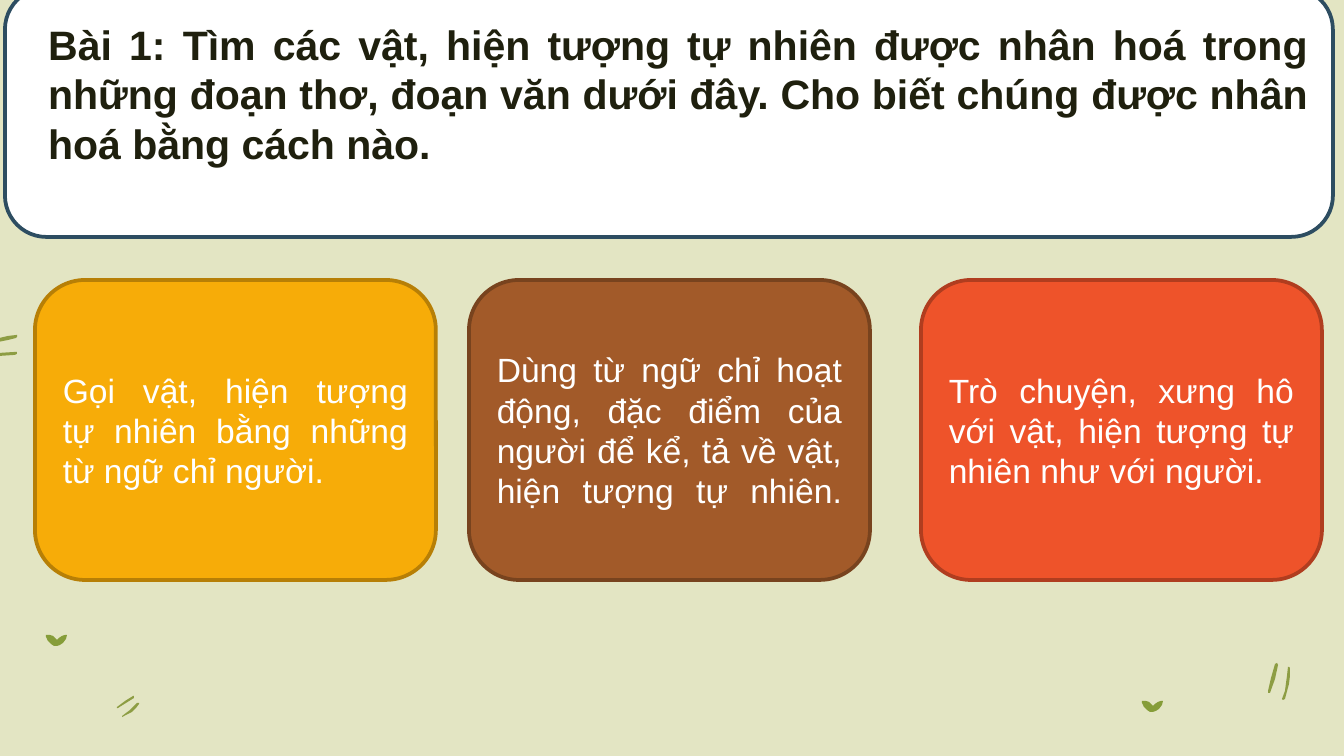
from pptx import Presentation
from pptx import util as u
from pptx.dml.color import RGBColor
from pptx.enum import shapes, text

PX = 914400 / 134.4
WHITE = RGBColor(0xFF, 0xFF, 0xFF)
SAGE = RGBColor(0xE3, 0xE5, 0xC3)
NAVY = RGBColor(0x2D, 0x4D, 0x61)
INK = RGBColor(0x1F, 0x20, 0x0E)
GRASS = RGBColor(0x8D, 0x9D, 0x43)
LEAF = RGBColor(0x86, 0x9D, 0x39)
AMBER = RGBColor(0xF7, 0xAC, 0x08)
AMBER_EDGE = RGBColor(0xB7, 0x7F, 0x06)
BROWN = RGBColor(0xA2, 0x5A, 0x29)
BROWN_EDGE = RGBColor(0x78, 0x43, 0x1E)
CORAL = RGBColor(0xEE, 0x53, 0x2A)
CORAL_EDGE = RGBColor(0xB0, 0x3D, 0x1F)

deck = Presentation()
deck.slide_width = round(1344 * PX)
deck.slide_height = round(756 * PX)
slide = deck.slides.add_slide(deck.slide_layouts[6])
slide.background.fill.solid()
slide.background.fill.fore_color.rgb = SAGE


def paint(shape, fill, edge=None):
    shape.shadow.inherit = False
    shape.fill.solid()
    shape.fill.fore_color.rgb = fill
    if edge is None:
        shape.line.fill.background()
    else:
        shape.line.color.rgb = edge
        shape.line.width = u.Pt(2)


def write(shape, wording, size=18, color=WHITE, bold=False, anchor=text.MSO_ANCHOR.MIDDLE):
    frame = shape.text_frame
    frame.word_wrap = True
    frame.vertical_anchor = anchor
    frame.text = wording
    paragraph = frame.paragraphs[0]
    paragraph.alignment = text.PP_ALIGN.JUSTIFY
    for run in paragraph.runs:
        run.font.name = "Arial"
        run.font.size = u.Pt(size)
        run.font.bold = bold
        run.font.color.rgb = color


blades = [
    [(1277, 663), (1275, 664), (1271, 678), (1268, 691), (1268, 693), (1270, 693), (1275, 679), (1278, 665)],
    [(1289, 667), (1288, 667), (1287, 676), (1285, 691), (1282, 699), (1283, 700), (1285, 699),
     (1289, 684), (1290, 676), (1290, 668)],
    [(134, 696), (133, 696), (125, 701), (117, 707), (117, 708), (118, 708), (126, 703), (134, 698)],
    [(139, 703), (137, 703), (130, 710), (122, 716), (122, 717), (126, 715), (132, 712), (136, 708), (139, 704)],
    [(-16, 358), (-15, 359), (0, 356), (15, 355), (17, 354), (17, 352), (15, 352), (0, 353), (-15, 356)],
    [(-17, 344), (-16, 345), (-7, 343), (8, 340), (16, 338), (17, 337), (17, 335), (16, 335), (8, 336),
     (-9, 340), (-17, 343)],
]
sprout = [(0, 0), (4, 0), (7, 1), (9, 3), (11, 5), (13, 3), (16, 1), (19, 0), (21, 0), (20, 4),
          (17, 8), (14, 10), (11, 11), (8, 11), (5, 9), (2, 6), (0, 2)]
sprouts = [[(left + x, top + y) for x, y in sprout] for left, top in [(46, 635), (1142, 701)]]

for color, outlines in [(GRASS, blades), (LEAF, sprouts)]:
    for outline in outlines:
        builder = slide.shapes.build_freeform(*outline[0], scale=PX)
        builder.add_line_segments(outline[1:], close=True)
        paint(builder.convert_to_shape(), color)

banner = slide.shapes.add_shape(
    shapes.MSO_SHAPE.ROUNDED_RECTANGLE, *[round(n * PX) for n in (5, -12, 1328, 249)])
paint(banner, WHITE, NAVY)

task = slide.shapes.add_textbox(*[round(n * PX) for n in (35, 13, 1287, 163)])
write(task, "Bài 1: Tìm các vật, hiện tượng tự nhiên được nhân hoá trong những đoạn thơ, "
            "đoạn văn dưới đây. Cho biết chúng được nhân hoá bằng cách nào.",
      size=22, color=INK, bold=True, anchor=text.MSO_ANCHOR.TOP)

ways = [
    (35, AMBER, AMBER_EDGE, "Gọi vật, hiện tượng\vtự nhiên bằng những\vtừ ngữ chỉ người."),
    (469, BROWN, BROWN_EDGE,
     "\vDùng từ ngữ chỉ hoạt động, đặc điểm của người để kể, tả về vật, hiện tượng tự nhiên.\v"),
    (921, CORAL, CORAL_EDGE, "Trò chuyện, xưng hô với vật, hiện tượng tự nhiên như với người."),
]
for left, fill, edge, wording in ways:
    way = slide.shapes.add_shape(
        shapes.MSO_SHAPE.ROUNDED_RECTANGLE, *[round(n * PX) for n in (left, 280, 401, 300)])
    paint(way, fill, edge)
    write(way, wording)

deck.save("out.pptx")
